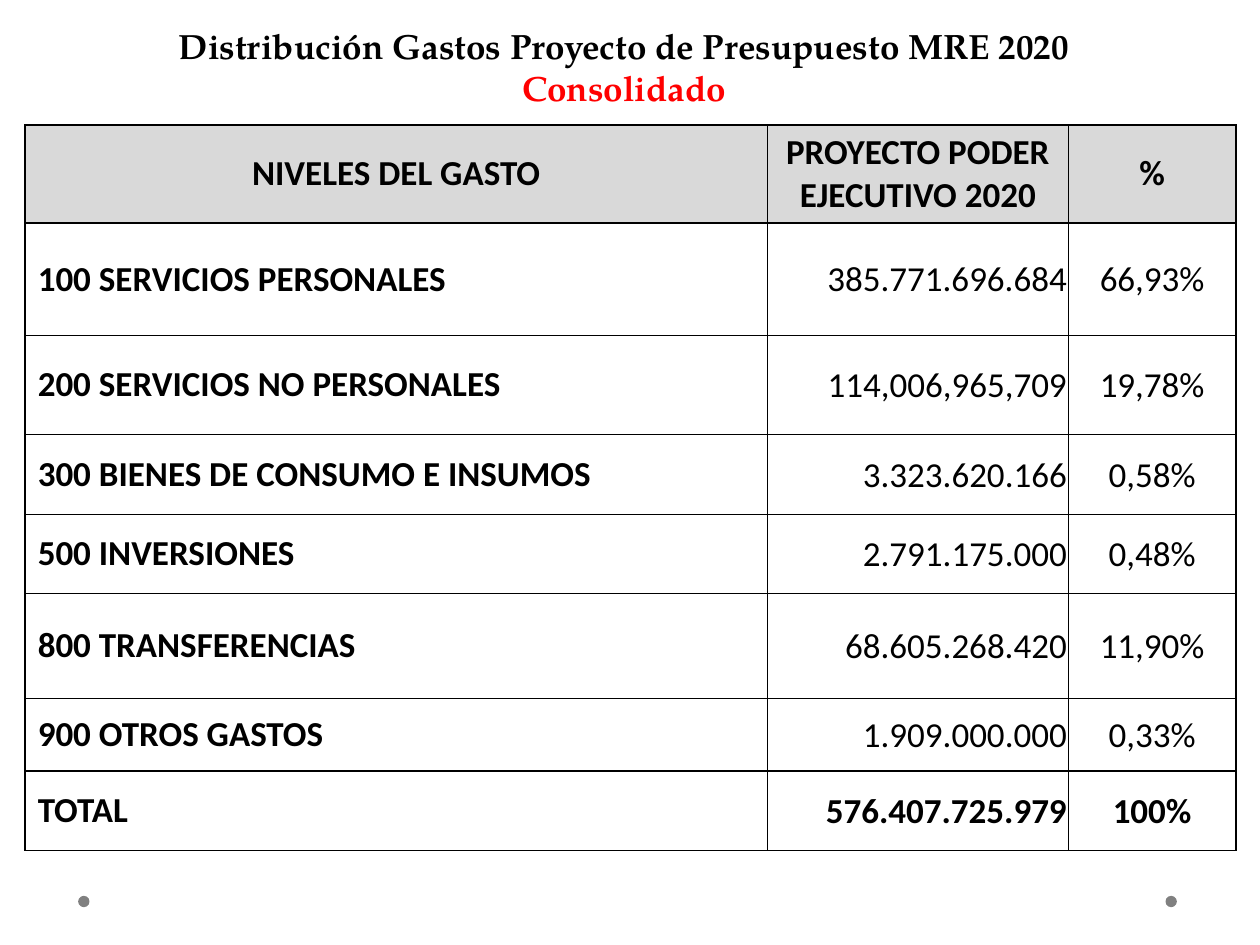
from lxml.etree import SubElement
from pptx import Presentation
from pptx.dml.color import RGBColor
from pptx.enum.shapes import MSO_SHAPE
from pptx.enum.text import MSO_ANCHOR, MSO_AUTO_SIZE, PP_ALIGN
from pptx.oxml.ns import qn
from pptx.util import Inches, Pt

TITLE_FONT = "TeX Gyre Pagella"
TABLE_FONT = "Calibri"
COLUMN_WIDTHS = [5.89, 2.39, 1.33]
ROW_HEIGHTS = [0.77, 0.89, 0.79, 0.63, 0.63, 0.83, 0.58, 0.63]
BODY_ALIGNMENTS = [PP_ALIGN.LEFT, PP_ALIGN.RIGHT, PP_ALIGN.CENTER]
WIDE_MARGINS = (0.1, 0.05, 0.1, 0.05)
NARROW_MARGINS = (0.01, 0.01, 0.01, 0)
EXPENSES = [
    ("NIVELES DEL GASTO", "PROYECTO PODER EJECUTIVO 2020", "%"),
    ("100 SERVICIOS PERSONALES", "385.771.696.684", "66,93%"),
    ("200 SERVICIOS NO PERSONALES", "114,006,965,709", "19,78%"),
    ("300 BIENES DE CONSUMO E INSUMOS", "3.323.620.166", "0,58%"),
    ("500 INVERSIONES", "2.791.175.000", "0,48%"),
    ("800 TRANSFERENCIAS", "68.605.268.420", "11,90%"),
    ("900 OTROS GASTOS", "1.909.000.000", "0,33%"),
    ("TOTAL", "576.407.725.979", "100%"),
]


def color(value):
    return RGBColor.from_string(value)


def add_text(paragraph, text, font=TABLE_FONT, size=20, bold=True, fill="000000"):
    run = paragraph.add_run()
    run.text = text
    run.font.name = font
    run.font.size = Pt(size)
    run.font.bold = bold
    run.font.color.rgb = color(fill)


def set_margins(target, margins):
    left, top, right, bottom = map(Inches, margins)
    target.margin_left, target.margin_top = left, top
    target.margin_right, target.margin_bottom = right, bottom


def set_borders(cell, widths):
    """Draw black borders; widths are points for left, right, top and bottom."""
    properties = cell._tc.get_or_add_tcPr()
    for side, width in zip("LRTB", widths):
        line = SubElement(properties, qn(f"a:ln{side}"), w=str(Pt(width)))
        fill = SubElement(line, qn("a:solidFill"))
        SubElement(fill, qn("a:srgbClr"), val="000000")


def border_widths(row, column):
    """Thin lines inside the body, thick ones around it, the header and the total."""
    last_row, last_column = len(ROW_HEIGHTS) - 1, len(COLUMN_WIDTHS) - 1
    edge_row = row in (0, last_row)
    thick = (
        edge_row or column == 0,
        edge_row or column == last_column,
        edge_row or row == 1,
        edge_row or row == last_row - 1,
    )
    return [1 if is_thick else 0.5 for is_thick in thick]


def format_title(title):
    title.left, title.top = Inches(0.35), Inches(-0.11)
    title.width, title.height = Inches(9.21), Inches(1.02)
    frame = title.text_frame
    frame.word_wrap = True
    frame.auto_size = MSO_AUTO_SIZE.NONE
    frame.vertical_anchor = MSO_ANCHOR.BOTTOM
    set_margins(frame, WIDE_MARGINS)
    paragraph = frame.paragraphs[0]
    paragraph.alignment = PP_ALIGN.CENTER
    add_text(paragraph, "Distribución Gastos Proyecto de Presupuesto MRE 2020", font=TITLE_FONT)
    paragraph.add_line_break()
    add_text(paragraph, "Consolidado", font=TITLE_FONT, fill="FF0000")


def fill_cell(cell, text, row, column):
    header, total = row == 0, row == len(ROW_HEIGHTS) - 1
    cell.vertical_anchor = MSO_ANCHOR.MIDDLE
    set_margins(cell, WIDE_MARGINS if header or column == 0 else NARROW_MARGINS)
    set_borders(cell, border_widths(row, column))
    if header:
        cell.fill.solid()
        cell.fill.fore_color.rgb = color("D9D9D9")
    else:
        cell.fill.background()
    paragraph = cell.text_frame.paragraphs[0]
    paragraph.alignment = PP_ALIGN.CENTER if header else BODY_ALIGNMENTS[column]
    add_text(paragraph, text, bold=header or total or column == 0)


def add_expense_table(slide):
    table = slide.shapes.add_table(
        len(ROW_HEIGHTS), len(COLUMN_WIDTHS), Inches(0.2), Inches(0.99),
        Inches(sum(COLUMN_WIDTHS)), Inches(sum(ROW_HEIGHTS)),
    ).table
    table.horz_banding = False
    for column, width in zip(table.columns, COLUMN_WIDTHS):
        column.width = Inches(width)
    for row, height in zip(table.rows, ROW_HEIGHTS):
        row.height = Inches(height)
    for row, texts in enumerate(EXPENSES):
        for column, text in enumerate(texts):
            fill_cell(table.cell(row, column), text, row, column)


def add_dot(slide, left):
    dot = slide.shapes.add_shape(
        MSO_SHAPE.OVAL, Inches(left), Inches(7.11), Inches(0.09), Inches(0.09)
    )
    dot.shadow.inherit = False
    dot.fill.solid()
    dot.fill.fore_color.rgb = color("808080")
    dot.line.fill.background()


def main():
    presentation = Presentation()
    presentation.slide_width, presentation.slide_height = Inches(10), Inches(7.5)
    slide = presentation.slides.add_slide(presentation.slide_layouts[5])
    for left in (9.25, 0.62):
        add_dot(slide, left)
    format_title(slide.shapes.title)
    add_expense_table(slide)
    presentation.save("out.pptx")


if __name__ == "__main__":
    main()
